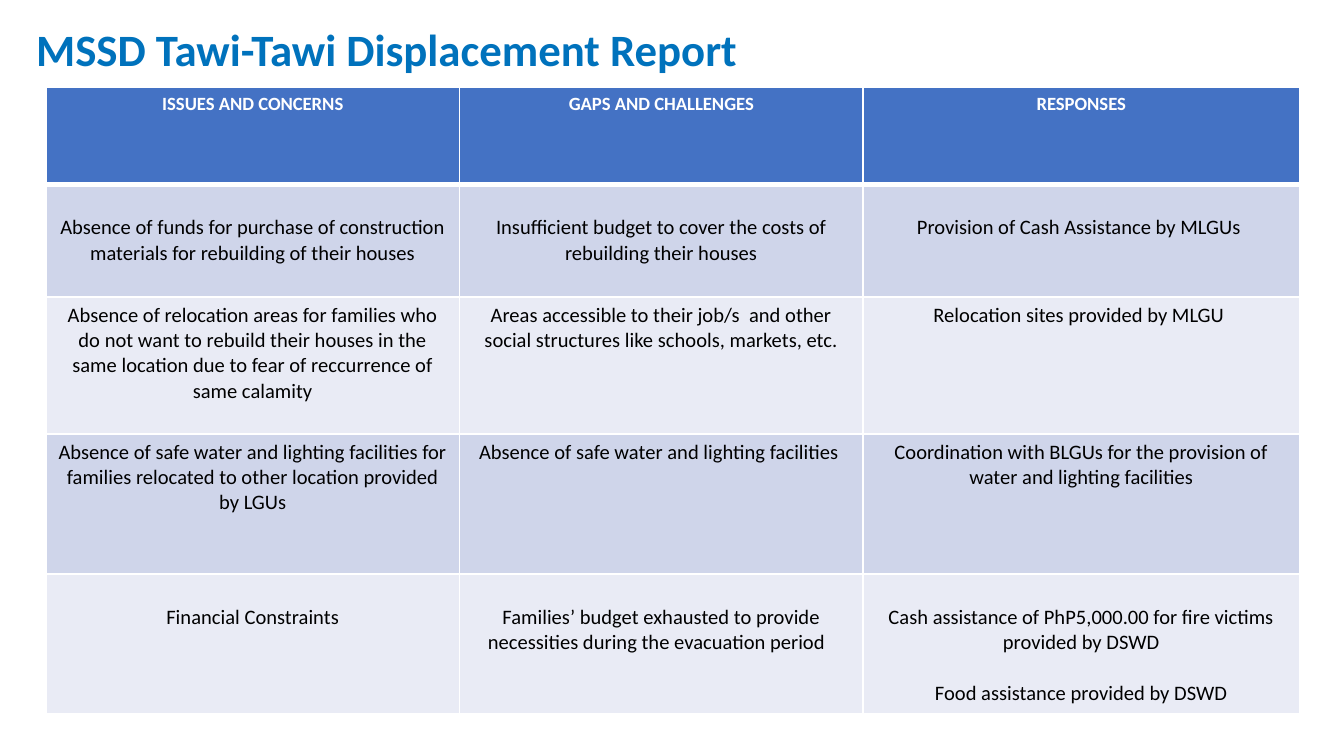
from lxml.etree import SubElement
from pptx import Presentation
from pptx.dml.color import RGBColor
from pptx.enum.text import PP_ALIGN
from pptx.oxml.ns import qn
from pptx.util import Inches, Pt

SLIDE_WIDTH = 10
TITLE = "MSSD Tawi-Tawi Displacement Report"
HEADERS = ["ISSUES AND CONCERNS", "GAPS AND CHALLENGES", "RESPONSES"]
# Each cell is a list of paragraphs
BODY = [
    [["Absence of funds for purchase of construction materials for rebuilding of their houses"],
     ["Insufficient budget to cover the costs of rebuilding their houses"],
     ["Provision of Cash Assistance by MLGUs "]],
    [["Absence of relocation areas for families who do not want to rebuild their houses "
      "in the same location due to fear of reccurrence of same calamity"],
     ["Areas accessible to their job/s  and other social structures like schools, markets, etc."],
     ["Relocation sites provided by MLGU "]],
    [["Absence of safe water and lighting facilities for families relocated to other "
      "location provided by LGUs"],
     ["Absence of safe water and lighting facilities "],
     ["Coordination with BLGUs for the provision of water and lighting facilities"]],
    [["Financial Constraints"],
     ["Families’ budget exhausted to provide necessities during the evacuation period  "],
     ["Cash assistance of PhP5,000.00 for fire victims provided by DSWD",
      "Food assistance provided by DSWD"]],
]
COLUMN_WIDTHS = [3.08, 3, 3.25]
ROW_HEIGHTS = [0.72, 0.84, 1.02, 1.04, 1.04]
LOWERED_ROWS = {1, 4}  # text starts one line below the top
LINE_HEIGHT = 0.19
HEADER_FILL = "4472C4"
BAND_FILLS = ["CFD5EA", "E9EBF5"]
TITLE_FORMAT = {"name": "Calibri", "size": Pt(24), "bold": True}
HEADER_FORMAT = {"name": "Calibri", "size": Pt(10), "bold": True}
BODY_FORMAT = {"name": "Calibri", "size": Pt(11), "bold": False}


def color(hex_value):
    return RGBColor.from_string(hex_value)


def write_paragraph(paragraph, text, text_format, hex_color):
    run = paragraph.add_run()
    run.text = text
    for name, value in text_format.items():
        setattr(run.font, name, value)
    run.font.color.rgb = color(hex_color)


def add_title(slide):
    box = slide.shapes.add_textbox(Inches(0.17), Inches(0.11), Inches(6.78), Inches(0.5))
    box.text_frame.word_wrap = True
    write_paragraph(box.text_frame.paragraphs[0], TITLE, TITLE_FORMAT, "0072BC")


def set_borders(cell, widths):
    properties = cell._tc.get_or_add_tcPr()
    for side, width in widths.items():
        line = SubElement(properties, qn(f"a:ln{side}"), w=str(Pt(width)))
        fill = SubElement(line, qn("a:solidFill"))
        SubElement(fill, qn("a:srgbClr"), val="FFFFFF")


def fill_cell(cell, texts, row_index):
    is_header = row_index == 0
    # Borders come before the fill in the cell properties
    set_borders(cell, {"L": 1, "R": 1,
                       "T": 3 if row_index == 1 else 1,
                       "B": 3 if is_header else 1})
    cell.fill.solid()
    cell.fill.fore_color.rgb = color(
        HEADER_FILL if is_header else BAND_FILLS[(row_index - 1) % 2])

    top = 0.04 + (LINE_HEIGHT if row_index in LOWERED_ROWS else 0)
    margins = {"margin_left": 0.07, "margin_right": 0.07,
               "margin_top": top, "margin_bottom": 0.04}
    for name, value in margins.items():
        setattr(cell, name, Inches(value))

    frame = cell.text_frame
    for index, text in enumerate(texts):
        paragraph = frame.add_paragraph() if index else frame.paragraphs[0]
        paragraph.alignment = PP_ALIGN.CENTER
        if index:
            paragraph.space_before = Inches(LINE_HEIGHT)
        write_paragraph(paragraph, text,
                        HEADER_FORMAT if is_header else BODY_FORMAT,
                        "FFFFFF" if is_header else "000000")


def add_report_table(slide):
    rows = [[[header] for header in HEADERS]] + BODY
    table = slide.shapes.add_table(
        len(rows), len(HEADERS), Inches(0.34), Inches(0.65),
        Inches(sum(COLUMN_WIDTHS)), Inches(sum(ROW_HEIGHTS))).table
    for column, width in zip(table.columns, COLUMN_WIDTHS):
        column.width = Inches(width)
    for row, height in zip(table.rows, ROW_HEIGHTS):
        row.height = Inches(height)
    for row_index, row in enumerate(rows):
        for column_index, texts in enumerate(row):
            fill_cell(table.cell(row_index, column_index), texts, row_index)


def main():
    presentation = Presentation()
    # Widescreen, 16:9
    presentation.slide_width = Inches(SLIDE_WIDTH)
    presentation.slide_height = Inches(SLIDE_WIDTH * 9 / 16)
    slide = presentation.slides.add_slide(presentation.slide_layouts[6])
    add_report_table(slide)
    add_title(slide)
    presentation.save("out.pptx")


if __name__ == "__main__":
    main()
